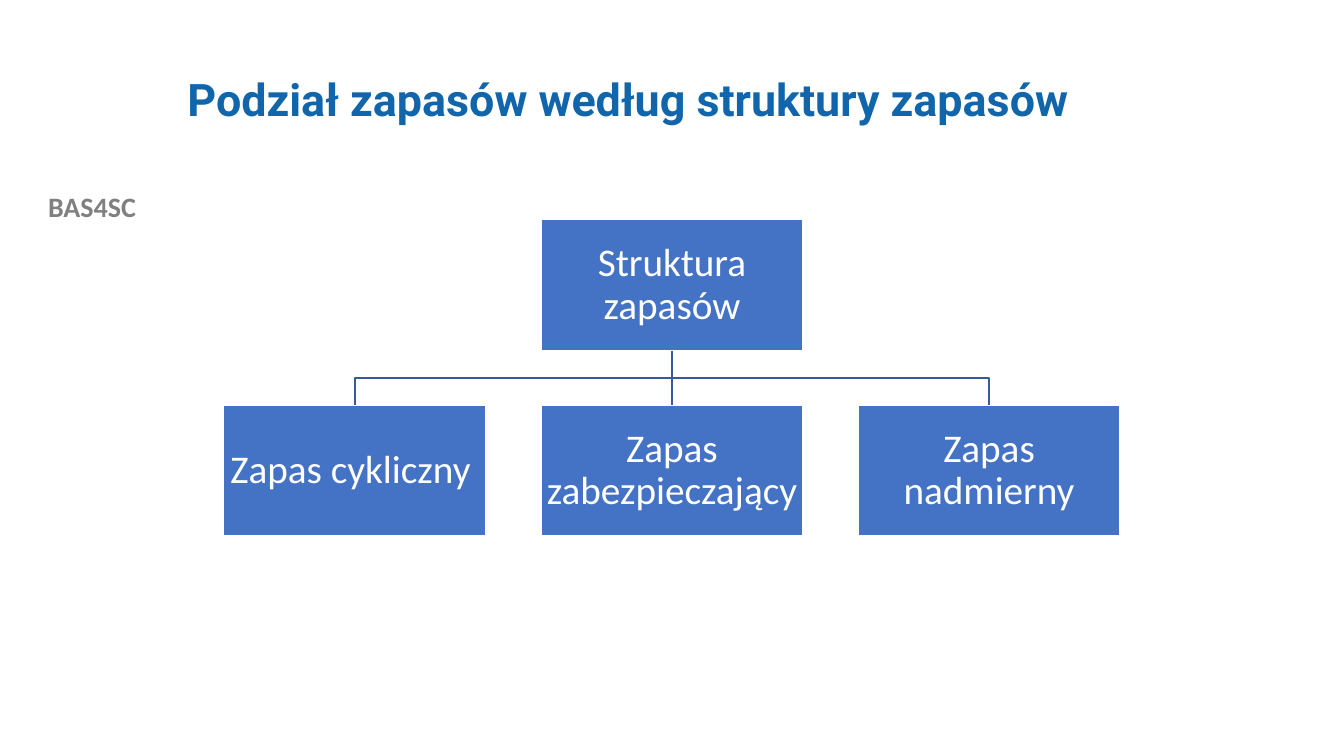
import pptx
import pptx.dml.color
import pptx.enum.shapes
import pptx.enum.text
import pptx.oxml
import pptx.oxml.ns
import pptx.util

ALIGN = pptx.enum.text.PP_ALIGN
MIDDLE = pptx.enum.text.MSO_ANCHOR.MIDDLE


def colour(value):
    return pptx.dml.color.RGBColor.from_string(value)


class StructureSlide:
    """Style and current page; chart lengths are grid columns and rows."""

    wide, high = 13.33, 7.5
    left, top = 2.22, 2.18
    column, row = 3.145, 1.84
    box_width, box_height = 2.6, 1.3
    blue, branch_blue, white = "4472C4", "365B9D", "FFFFFF"

    def __init__(self, deck):
        deck.slide_width = pptx.util.Inches(self.wide)
        deck.slide_height = pptx.util.Inches(self.high)
        self.page = deck.slides.add_slide(deck.slide_layouts[6])

    def set_text(self, frame, text, size, tint, font="Calibri", bold=False,
                 align=ALIGN.CENTER, spacing=None):
        frame.text = text
        frame.word_wrap = True
        para = frame.paragraphs[0]
        para.alignment = align
        para.line_spacing = spacing
        for span in para.runs:
            span.font.name = font
            span.font.size = pptx.util.Pt(size)
            span.font.bold = bold
            span.font.color.rgb = colour(tint)

    def label(self, text, x, y, width, height, size, tint, **style):
        """Add a text box placed by shares of the slide's size."""
        across, down = pptx.util.Inches(self.wide), pptx.util.Inches(self.high)
        box = self.page.shapes.add_textbox(
            round(x * across), round(y * down), round(width * across), round(height * down))
        box.text_frame.vertical_anchor = MIDDLE
        self.set_text(box.text_frame, text, size, tint, **style)

    def node(self, text, column, row):
        box = self.page.shapes.add_shape(
            pptx.enum.shapes.MSO_SHAPE.RECTANGLE,
            pptx.util.Inches(self.left + column * self.column),
            pptx.util.Inches(self.top + row * self.row),
            pptx.util.Inches(self.box_width), pptx.util.Inches(self.box_height))
        box.shadow.inherit = False
        box.fill.solid()
        box.fill.fore_color.rgb = colour(self.blue)
        self.outline(box, self.white)
        frame = box.text_frame
        frame.vertical_anchor = MIDDLE
        frame.margin_left = frame.margin_right = pptx.util.Inches(0.02)
        frame.margin_top = frame.margin_bottom = pptx.util.Inches(0.02)
        self.set_text(frame, text, 28, self.white, spacing=0.9)
        return box

    def outline(self, shape, tint):
        shape.line.color.rgb = colour(tint)
        shape.line.width = pptx.util.Pt(1)

    def branch(self, parent, child):
        """Join two nodes: straight when aligned, otherwise with two bends."""
        start_x, end_x = (box.left + box.width // 2 for box in (parent, child))
        start_y, end_y = parent.top + parent.height, child.top
        if start_x == end_x:
            line = self.page.shapes.add_connector(
                pptx.enum.shapes.MSO_CONNECTOR.STRAIGHT, start_x, start_y, end_x, end_y)
            line.begin_connect(parent, 2)
            line.end_connect(child, 0)
            self.outline(line, self.branch_blue)
            line._element.spPr.append(pptx.oxml.parse_xml(
                "<a:effectLst %s/>" % pptx.oxml.ns.nsdecls("a")))
            return
        middle_y = (start_y + end_y) // 2
        builder = self.page.shapes.build_freeform(start_x, start_y)
        builder.add_line_segments(
            [(start_x, middle_y), (end_x, middle_y), (end_x, end_y)], close=False)
        line = builder.convert_to_shape()
        line.shadow.inherit = False
        line.fill.background()
        self.outline(line, self.branch_blue)


def main():
    deck = pptx.Presentation()
    slide = StructureSlide(deck)

    # Project mark and title
    slide.label("BAS4SC", 0, 0.244, 0.137, 0.059, 20, "808080", bold=True)
    slide.label("Podział zapasów według struktury zapasów", 0.132, 0.053, 0.8, 0.163,
                32, "1065AB", font="Roboto", bold=True, align=ALIGN.LEFT, spacing=0.9)

    # Hierarchy of stock types
    root = slide.node("Struktura zapasów", 1, 0)
    kinds = ["Zapas cykliczny ", "Zapas zabezpieczający", "Zapas nadmierny"]
    for column, kind in enumerate(kinds):
        slide.branch(root, slide.node(kind, column, 1))

    deck.save("out.pptx")


if __name__ == "__main__":
    main()
